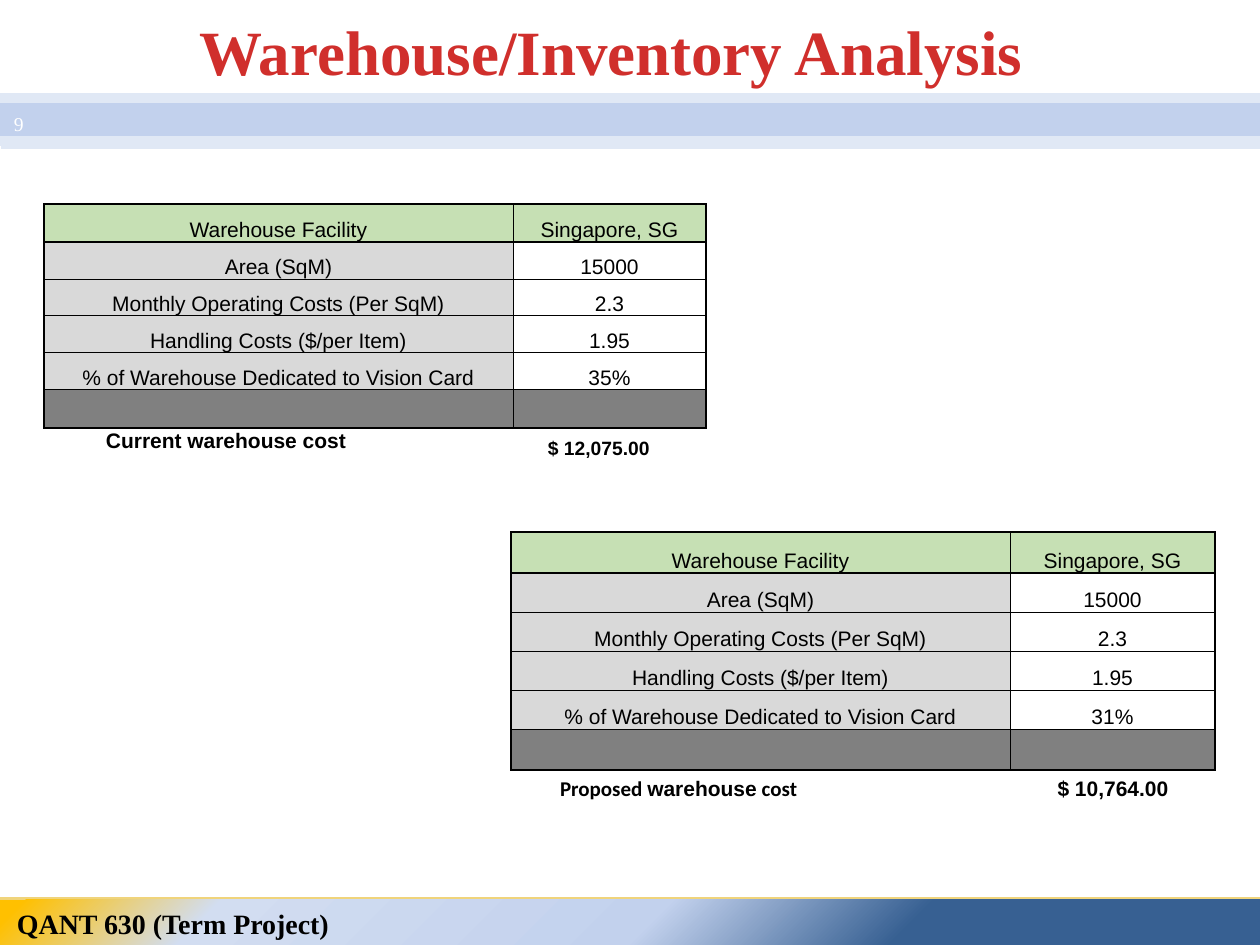
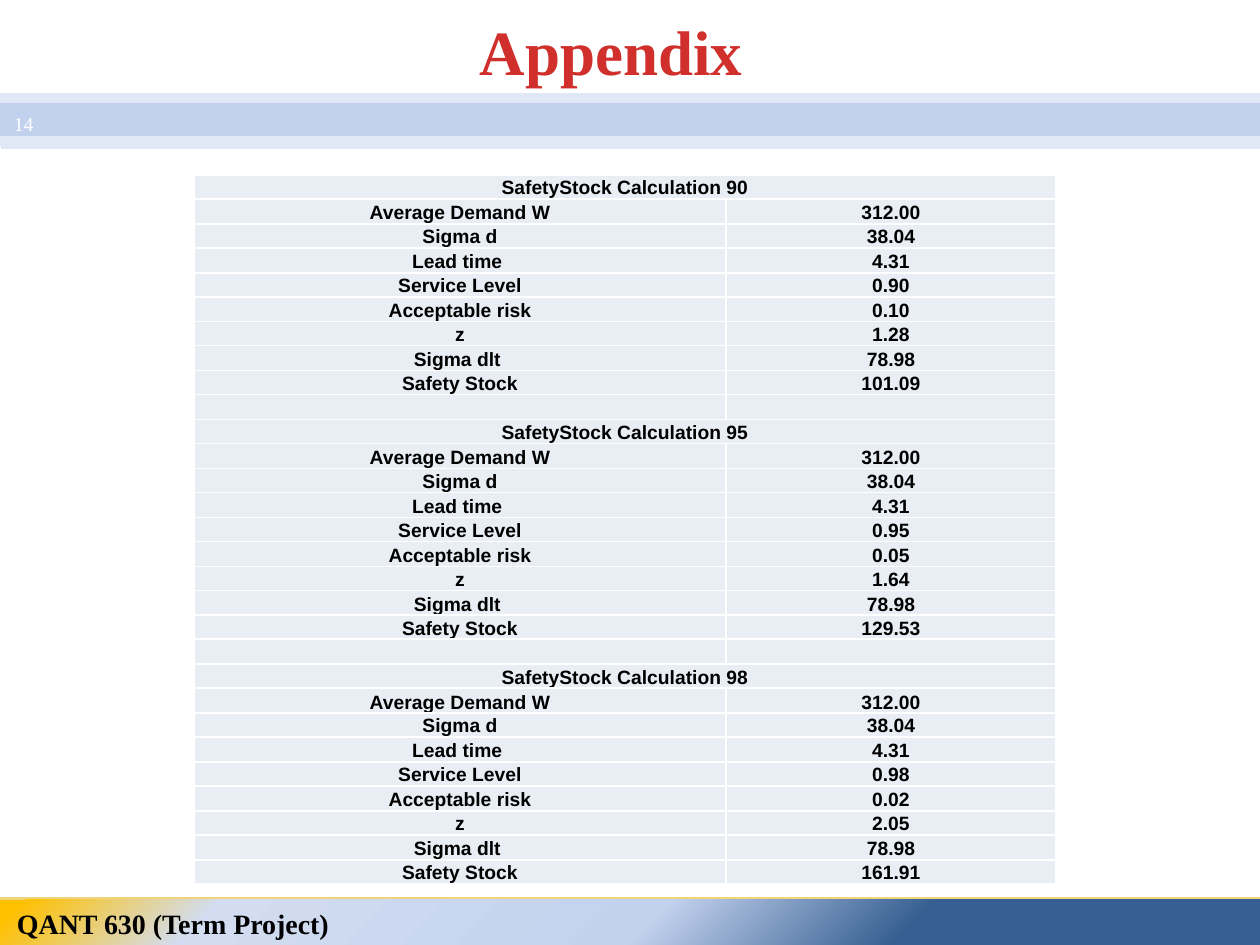
from dataclasses import dataclass
from typing import NamedTuple, Sequence

from pptx import Presentation, oxml, util as u
from pptx.dml import color
from pptx.enum import shapes, text as t
from pptx.oxml import ns
from pptx.slide import Slide
from pptx.text.text import TextFrame

EMU_PER_PX = 914400 / 126
SLIDE_W, SLIDE_H = 1260, 945
TITLE_CENTER = 611

SERIF, SANS, CALIBRI = "Times New Roman", "Arial", "Calibri"
BLACK, WHITE = "000000", "FFFFFF"
BAND, BAND_EDGE, GOLD = "C2D1ED", "E0E8F5", "F0D47B"
HEADER_GREEN, LABEL_GRAY, DARK_GRAY = "C6E0B4", "D9D9D9", "808080"
STOCK_FILL = "E9EDF4"

TITLE_STOPS = ((0, "FC7C7A"), (75, "D02F2C"), (100, "C70500"))
FOOTER_STOPS = ((29, "376092"), (49, "C2D1ED"), (83, "D2DDF1"), (98, "FFC000"))
LINEAR_DOWN = '<a:lin ang="5400000" scaled="0"/>'
FROM_BOTTOM_RIGHT = '<a:path path="circle"><a:fillToRect l="100000" t="100000"/></a:path>'

Runs = Sequence[tuple[str, str]]
Stops = Sequence[tuple[int, str]]


class Box(NamedTuple):
    left: int
    top: int
    width: int
    height: int


class Rule(NamedTuple):
    left: int
    y: int
    color: str
    points: float


@dataclass
class Grid:
    left: int
    top: int
    columns: Sequence[int]
    row_heights: Sequence[int]
    rows: Sequence[Sequence[str]]
    fills: Sequence[Sequence[str]]
    size: float
    bold: bool
    inset: int
    border: str
    inner_border: float


@dataclass
class Warehouse:
    left: int
    top: int
    columns: tuple[int, int]
    edge_row: int
    inner_row: int
    share: str


class SafetyStock(NamedTuple):
    level: int
    z: str
    stock: str


RULES = (
    Rule(0, 900, GOLD, 3),
    Rule(0, 125, BAND, 20),
    Rule(1, 144, BAND_EDGE, 5.5),
    Rule(1, 106, BAND_EDGE, 5.5),
    Rule(0, 120, BAND, 20),
    Rule(0, 141, BAND_EDGE, 5.5),
    Rule(0, 98, BAND_EDGE, 5.5),
)

CURRENT = Warehouse(44, 204, (469, 193), 38, 37, "35%")
PROPOSED = Warehouse(511, 532, (499, 205), 41, 39, "31%")

STOCKS = (
    SafetyStock(90, "1.28", "101.09"),
    SafetyStock(95, "1.64", "129.53"),
    SafetyStock(98, "2.05", "161.91"),
)


def px(length: int) -> u.Emu:
    return u.Emu(round(length * EMU_PER_PX))


def rgb(value: str) -> color.RGBColor:
    return color.RGBColor.from_string(value)


def gradient(stops: Stops, direction: str):
    marks = "".join(
        f'<a:gs pos="{position * 1000}"><a:srgbClr val="{value}"/></a:gs>'
        for position, value in stops
    )
    return oxml.parse_xml(
        f'<a:gradFill {ns.nsdecls("a")} rotWithShape="1">'
        f"<a:gsLst>{marks}</a:gsLst>{direction}</a:gradFill>"
    )


def write(
    frame: TextFrame,
    content: str | Runs,
    *,
    font: str = SANS,
    size: float = 12,
    ink: str = BLACK,
    bold: bool = False,
    align: t.PP_ALIGN = t.PP_ALIGN.CENTER,
    stops: Stops = (),
) -> None:
    """Fill the first paragraph; content is a string or (text, font) runs."""
    paragraph = frame.paragraphs[0]
    paragraph.alignment = align
    runs = [(content, font)] if isinstance(content, str) else content
    for words, face in runs:
        if not words:
            paragraph._p.get_or_add_endParaRPr().set("sz", str(round(size * 100)))
            continue
        run = paragraph.add_run()
        run.text = words
        run.font.name, run.font.size, run.font.bold = face, u.Pt(size), bold
        if stops:
            run.font._element.insert(0, gradient(stops, LINEAR_DOWN))
        else:
            run.font.color.rgb = rgb(ink)


def set_insets(frame: TextFrame, left: int, top: int, right: int, bottom: int) -> None:
    frame.margin_left, frame.margin_top = px(left), px(top)
    frame.margin_right, frame.margin_bottom = px(right), px(bottom)


def add_text(
    slide: Slide,
    box: Box,
    content: str | Runs,
    *,
    insets: tuple[int, int, int, int] = (13, 6, 13, 6),
    anchor: t.MSO_ANCHOR = t.MSO_ANCHOR.TOP,
    wrap: bool = True,
    **style,
) -> None:
    frame = slide.shapes.add_textbox(*map(px, box)).text_frame
    frame.word_wrap = wrap
    frame.vertical_anchor = anchor
    set_insets(frame, *insets)
    write(frame, content, **style)


def add_rule(slide: Slide, rule: Rule) -> None:
    line = slide.shapes.add_connector(
        shapes.MSO_CONNECTOR.STRAIGHT,
        px(rule.left), px(rule.y), px(SLIDE_W), px(rule.y),
    )
    line.line.color.rgb = rgb(rule.color)
    line.line.width = u.Pt(rule.points)
    line._element.spPr.append(oxml.parse_xml(f'<a:effectLst {ns.nsdecls("a")}/>'))


def add_footer(slide: Slide) -> None:
    footer = slide.shapes.add_shape(
        shapes.MSO_SHAPE.RECTANGLE, *map(px, Box(-3, 900, 1263, 60))
    )
    footer.shadow.inherit = False
    footer.line.fill.background()
    properties = footer._element.spPr
    properties.insert(2, gradient(FOOTER_STOPS, FROM_BOTTOM_RIGHT))
    frame = footer.text_frame
    frame.vertical_anchor = t.MSO_ANCHOR.MIDDLE
    set_insets(frame, 20, 6, 13, 20)
    write(frame, "QANT 630 (Term Project)", font=SERIF, size=16, bold=True,
          align=t.PP_ALIGN.LEFT)


def add_page(deck, title: str, title_width: int, number: str) -> Slide:
    """Add a slide with the shared footer, bands, title and page number."""
    slide = deck.slides.add_slide(deck.slide_layouts[6])
    gold, *bands = RULES
    add_rule(slide, gold)
    add_footer(slide)
    for band in bands:
        add_rule(slide, band)
    add_text(slide, Box(TITLE_CENTER - title_width // 2, 3, title_width, 98), title,
             insets=(13, 6, 13, 13), anchor=t.MSO_ANCHOR.BOTTOM, wrap=False,
             font=SERIF, size=36, bold=True, stops=TITLE_STOPS)
    add_text(slide, Box(1, 106, 73, 34), number, font=SERIF, size=11.2, ink=WHITE,
             align=t.PP_ALIGN.LEFT)
    return slide


def set_borders(cell, ink: str, widths: dict[str, float]) -> None:
    properties = cell._tc.get_or_add_tcPr()
    for side, points in widths.items():
        properties.append(oxml.parse_xml(
            f'<a:ln{side} {ns.nsdecls("a")} w="{round(points * 12700)}"><a:solidFill>'
            f'<a:srgbClr val="{ink}"/></a:solidFill></a:ln{side}>'
        ))


def add_grid(slide: Slide, grid: Grid) -> None:
    """Draw a table; a row with a single entry spans all columns."""
    last_row, last_column = len(grid.rows) - 1, len(grid.columns) - 1
    table = slide.shapes.add_table(
        last_row + 1, last_column + 1, px(grid.left), px(grid.top),
        px(sum(grid.columns)), px(sum(grid.row_heights)),
    ).table
    table.first_row = table.horz_banding = False
    for column, width in zip(table.columns, grid.columns):
        column.width = px(width)
    for row, height in zip(table.rows, grid.row_heights):
        row.height = px(height)
    for r, entries in enumerate(grid.rows):
        for c in range(last_column + 1):
            cell = table.cell(r, c)
            outer = {"L": c == 0, "R": c == last_column,
                     "T": r <= 1, "B": r in (0, last_row)}
            set_borders(cell, grid.border, {
                side: 1 if edge else grid.inner_border for side, edge in outer.items()
            })
            cell.fill.solid()
            cell.fill.fore_color.rgb = rgb(grid.fills[r][c])
            cell.vertical_anchor = t.MSO_ANCHOR.BOTTOM
            set_insets(cell, grid.inset, grid.inset, grid.inset, 0)
            write(cell.text_frame, entries[c] if c < len(entries) else "",
                  size=grid.size, bold=grid.bold)
        if len(entries) == 1:
            table.cell(r, 0).merge(table.cell(r, last_column))


def add_warehouse(slide: Slide, site: Warehouse) -> None:
    rows = (
        ("Warehouse Facility", "Singapore, SG"),
        ("Area (SqM)", "15000"),
        ("Monthly Operating Costs (Per SqM)", "2.3"),
        ("Handling Costs ($/per Item)", "1.95"),
        ("% of Warehouse Dedicated to Vision Card", site.share),
        ("", ""),
    )
    inner = len(rows) - 2
    add_grid(slide, Grid(
        site.left, site.top, site.columns,
        [site.edge_row, *[site.inner_row] * inner, site.edge_row], rows,
        [(HEADER_GREEN,) * 2, *[(LABEL_GRAY, WHITE)] * inner, (DARK_GRAY,) * 2],
        size=12, bold=False, inset=1, border=BLACK, inner_border=0.5,
    ))


def stock_rows(case: SafetyStock) -> list[tuple[str, ...]]:
    return [
        (f"SafetyStock Calculation {case.level}",),
        ("Average Demand W", "312.00"),
        ("Sigma d", "38.04"),
        ("Lead time ", "4.31"),
        ("Service Level", f"{case.level / 100:.2f}"),
        ("Acceptable risk", f"{1 - case.level / 100:.2f}"),
        ("z", case.z),
        ("Sigma dlt ", "78.98"),
        ("Safety Stock", case.stock),
    ]


def build_warehouse_page(deck) -> None:
    slide = add_page(deck, "Warehouse/Inventory Analysis", 858, "9")
    add_text(slide, Box(76, 399, 306, 83), "Current warehouse cost ",
             insets=(13, 38, 13, 6), bold=True)
    add_warehouse(slide, CURRENT)
    add_text(slide, Box(512, 430, 174, 36), " $ 12,075.00 ", size=11, bold=True)
    add_warehouse(slide, PROPOSED)
    add_text(slide, Box(512, 770, 338, 38),
             [("Proposed ", CALIBRI), ("warehouse", SANS), (" cost ", CALIBRI)], bold=True)
    add_text(slide, Box(1002, 770, 223, 38),
             [(" ", CALIBRI), ("$ 10,764.00 ", SANS)], bold=True)


def build_appendix(deck) -> None:
    slide = add_page(deck, "Appendix", 296, "14")
    rows: list[tuple[str, ...]] = []
    for case in STOCKS:
        if rows:
            rows.append(("", ""))
        rows += stock_rows(case)
    add_grid(slide, Grid(
        194, 175, (532, 330), [24 + i % 2 for i in range(len(rows))], rows,
        [(STOCK_FILL,) * 2] * len(rows),
        size=11, bold=True, inset=0, border=WHITE, inner_border=1,
    ))


def main() -> None:
    deck = Presentation()
    deck.slide_width, deck.slide_height = px(SLIDE_W), px(SLIDE_H)
    build_warehouse_page(deck)
    build_appendix(deck)
    deck.save("out.pptx")


if __name__ == "__main__":
    main()
